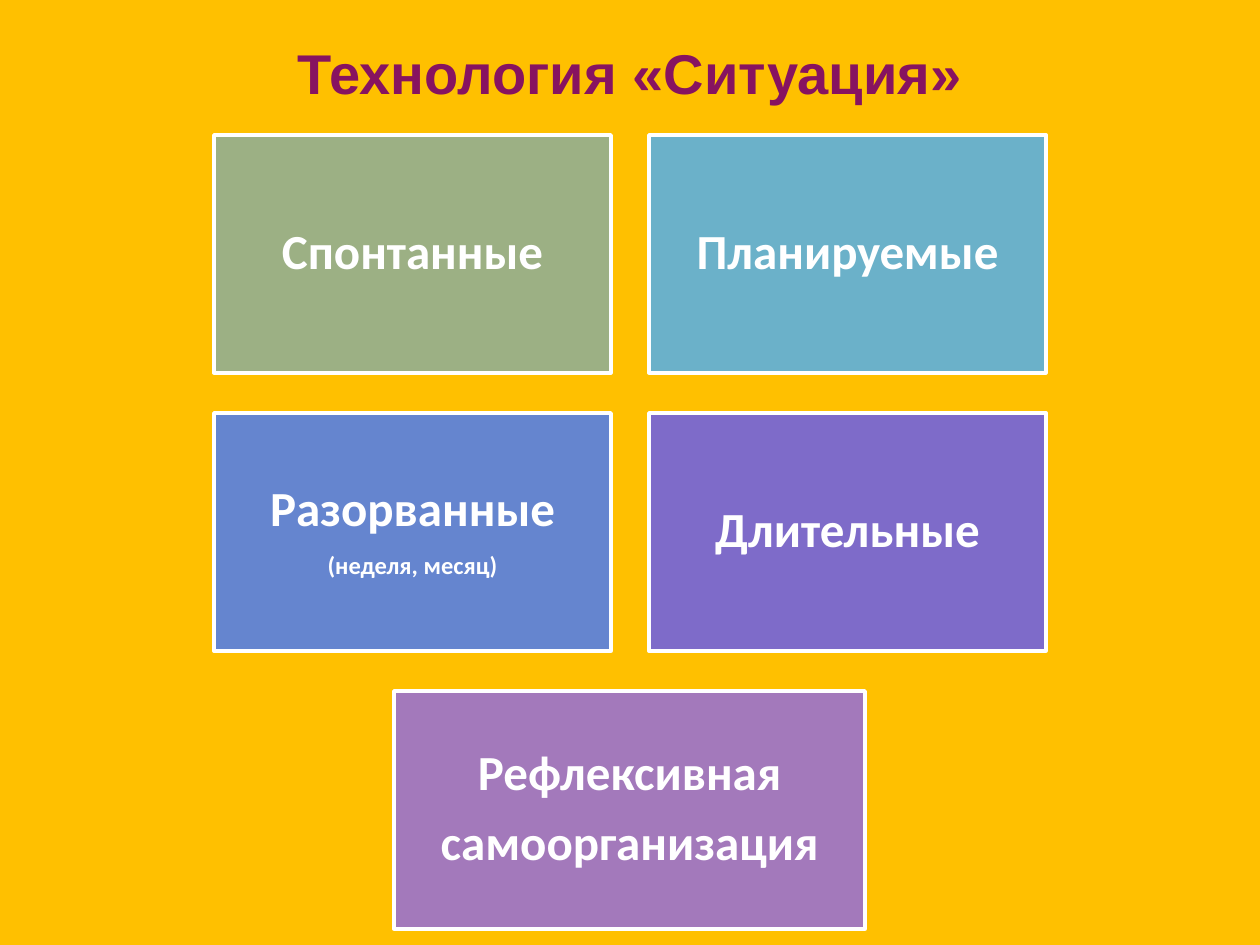
from dataclasses import dataclass

from pptx import Presentation
from pptx.dml.color import RGBColor
from pptx.enum.shapes import MSO_SHAPE
from pptx.enum.text import MSO_ANCHOR, PP_ALIGN
from pptx.util import Emu, Pt

SCALE = 914400 / 126  # EMU per px


def px(n):
    return Emu(round(n * SCALE))


@dataclass(frozen=True)
class Theme:
    back: str = "FFC000"
    head: str = "871360"
    white: str = "FFFFFF"
    sage: str = "9CB084"
    teal: str = "6BB1C9"
    blue: str = "6585CF"
    violet: str = "7E6BC9"
    mauve: str = "A379BB"
    head_font: str = "Arial"
    body_font: str = "Calibri"
    head_size: int = 32
    big: int = 28
    small: int = 14


class Deck:
    def __init__(self, theme, wide, high):
        self.theme = theme
        self.file = Presentation()
        self.file.slide_width, self.file.slide_height = px(wide), px(high)
        self.slide = self.file.slides.add_slide(self.file.slide_layouts[5])
        self.paint(self.slide.background.fill, theme.back)

    def paint(self, fill, color):
        fill.solid()
        fill.fore_color.rgb = RGBColor.from_string(color)

    def style(self, para, face, size, color):
        para.alignment = PP_ALIGN.CENTER
        for run in para.runs:
            font = run.font
            font.name, font.size, font.bold = face, Pt(size), True
            font.color.rgb = RGBColor.from_string(color)

    def title(self, text, x, y, w, h):
        t = self.theme
        shape = self.slide.shapes.title
        shape.left, shape.top, shape.width, shape.height = map(px, (x, y, w, h))
        frame = shape.text_frame
        frame.text = text
        frame.vertical_anchor = MSO_ANCHOR.TOP
        frame.margin_top = 0
        self.style(frame.paragraphs[0], t.head_font, t.head_size, t.head)

    def box(self, lines, color, x, y, w, h):
        t = self.theme
        shape = self.slide.shapes.add_shape(MSO_SHAPE.RECTANGLE, *map(px, (x, y, w, h)))
        shape.shadow.inherit = False
        self.paint(shape.fill, color)
        self.paint(shape.line.fill, t.white)
        shape.line.width = Pt(2)
        frame = shape.text_frame
        frame.word_wrap = True
        frame.vertical_anchor = MSO_ANCHOR.MIDDLE
        frame.margin_left = frame.margin_right = px(15)
        frame.margin_top = frame.margin_bottom = px(15)
        frame.text = "\n".join(text for text, size in lines)
        for para, (text, size) in zip(frame.paragraphs, lines):
            para.line_spacing = 0.9
            para.space_after = Pt(9.8)
            self.style(para, t.body_font, size, t.white)


def main():
    t = Theme()
    wide, high = 1260, 945
    deck = Deck(t, wide, high)

    # Heading
    deck.title("Технология «Ситуация»", 63, 38, 1134, 127)

    # Rows of boxes: box width, then text lines and colour of each box
    rows = [
        (397, [([("Спонтанные", t.big)], t.sage),
               ([("Планируемые", t.big)], t.teal)]),
        (397, [([("Разорванные", t.big), ("(неделя, месяц)", t.small)], t.blue),
               ([("Длительные", t.big)], t.violet)]),
        (471, [([("Рефлексивная", t.big), ("самоорганизация", t.big)], t.mauve)]),
    ]
    top, tall, gap, step = 135, 238, 38, 278

    # Each row is centred on the slide
    for i, (w, cells) in enumerate(rows):
        left = (wide - len(cells) * (w + gap) + gap) // 2
        for j, (lines, color) in enumerate(cells):
            deck.box(lines, color, left + j * (w + gap), top + i * step, w, tall)

    deck.file.save("out.pptx")


if __name__ == "__main__":
    main()
